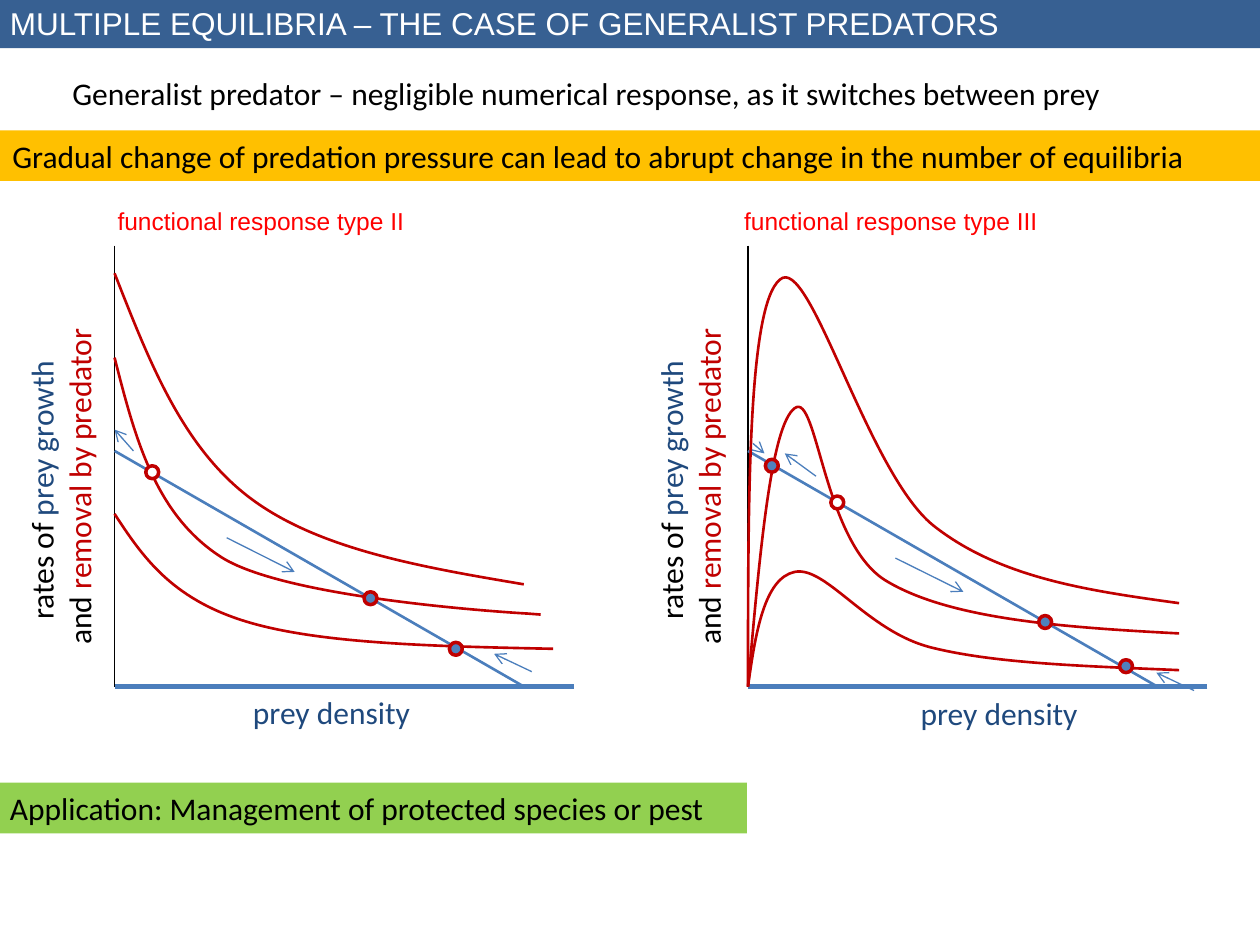
from dataclasses import dataclass

from lxml.etree import SubElement
from pptx import Presentation
from pptx.dml.color import RGBColor
from pptx.enum.shapes import MSO_CONNECTOR as Connector, MSO_SHAPE as Shape
from pptx.enum.text import MSO_AUTO_SIZE as AutoSize, PP_ALIGN as Align
from pptx.oxml.ns import qn
from pptx.util import Cm, Pt

BLACK, WHITE, RED, CRIMSON = "000000", "FFFFFF", "FF0000", "C00000"
NAVY, PREY_BLUE, STABLE_BLUE = "1F497D", "4B7EBC", "4F81BD"
AXIS_HEIGHT, AXIS_WIDTH = 8.89, 9.26
PREY_GROWTH = ((0, 4.75), (8.25, 0))


@dataclass
class Graph:
    """Hold one graph in cm, with points counted right and up from its origin."""
    title: str
    left: float
    title_x: float
    rates_x: float
    density_x: float
    density_drop: float
    predation: list
    stable: list
    unstable: list
    arrows: list


TYPE_II = Graph(
    "functional response type II", 2.31, 3.06, -1.09, 4.39, 0,
    predation=[
        [(0, 3.48), (0.56, 2.62), (1.14, 1.78), (2.62, 1.32),
         (4.09, 0.86), (6.45, 0.81), (8.84, 0.76)],
        [(0, 6.63), (0.41, 5.03), (0.81, 3.45), (2.18, 2.59),
         (3.58, 1.73), (8.33, 1.47), (8.33, 1.47),
         (8.33, 1.47), (8.59, 1.45), (8.59, 1.45)],
        [(0, 8.33), (0.69, 6.58), (1.35, 4.85), (2.72, 3.81),
         (4.09, 2.77), (6.17, 2.41), (8.25, 2.06)],
    ],
    stable=[(6.88, 0.76), (5.16, 1.78)],
    unstable=[(0.76, 4.32)],
    arrows=[((2.26, 3), (3.63, 2.31)), ((0.38, 4.75), (0, 5.18)),
            ((8.41, 0.3), (7.65, 0.66))],
)
TYPE_III = Graph(
    "functional response type III", 15.08, 2.92, -1.17, 5.08, 0.03,
    predation=[
        [(0, 0), (0.15, 1.09), (0.33, 2.18), (0.94, 2.31), (1.57, 2.44),
         (2.39, 1.12), (3.68, 0.79), (4.98, 0.46), (6.83, 0.41), (8.69, 0.33)],
        [(0, 0), (0.23, 2.64), (0.46, 5.26), (0.94, 5.61), (1.4, 5.97),
         (1.52, 2.84), (2.82, 2.11), (4.11, 1.35), (6.4, 1.19), (8.69, 1.07)],
        [(0, 0), (0, 3.84), (0, 7.67), (0.64, 8.2), (1.24, 8.76),
         (2.39, 4.34), (3.73, 3.25), (5.08, 2.18), (6.88, 1.93), (8.69, 1.68)],
    ],
    stable=[(7.62, 0.41), (5.99, 1.3), (0.48, 4.45)],
    unstable=[(1.8, 3.71)],
    arrows=[((2.97, 2.59), (4.34, 1.91)), ((1.37, 4.24), (0.74, 4.7)),
            ((0.1, 4.9), (0.33, 4.7)), ((8.99, -0.08), (8.23, 0.28))],
)


def rgb(value):
    """Turn a hex string into a colour."""
    return RGBColor.from_string(value)


def write(paragraph, pieces, size=18, font="Calibri", align=Align.LEFT):
    """Fill a paragraph with (text, colour) pieces."""
    paragraph.alignment = align
    paragraph.font.size = Pt(size)
    paragraph.font.name = font
    for text, color in pieces:
        run = paragraph.add_run()
        run.text = text
        run.font.color.rgb = rgb(color)


def add_label(slide, left, top, width, height, lines, **style):
    """Place unwrapped text, one list of pieces for each line."""
    label = slide.shapes.add_textbox(Cm(left), Cm(top), Cm(width), Cm(height))
    frame = label.text_frame
    frame.word_wrap = False
    frame.auto_size = AutoSize.SHAPE_TO_FIT_TEXT
    for index, pieces in enumerate(lines):
        paragraph = frame.add_paragraph() if index else frame.paragraphs[0]
        write(paragraph, pieces, **style)
    return label


def add_band(slide, left, top, width, fill, text, color=BLACK, font="Calibri"):
    """Place a filled band with one line of text."""
    band = slide.shapes.add_shape(
        Shape.RECTANGLE, Cm(left), Cm(top), Cm(width), Cm(1.02))
    band.shadow.inherit = False
    band.fill.solid()
    band.fill.fore_color.rgb = rgb(fill)
    band.line.fill.background()
    write(band.text_frame.paragraphs[0], [(text, color)], font=font)


def add_line(slide, start, end, color, weight, arrow=False):
    """Draw a straight line, with an open arrowhead at its end if asked."""
    line = slide.shapes.add_connector(
        Connector.STRAIGHT, *(Cm(value) for value in (*start, *end)))
    line.line.color.rgb = rgb(color)
    line.line.width = Pt(weight)
    if arrow:
        SubElement(line.line._get_or_add_ln(), qn("a:tailEnd"), type="arrow")
    SubElement(line._element.spPr, qn("a:effectLst"))


def add_curve(slide, points):
    """Draw a Bézier curve from a start point and groups of three points."""
    start, *others = [(Cm(x), Cm(y)) for x, y in points]
    builder = slide.shapes.build_freeform(*start)
    builder.add_line_segments(others, close=False)
    curve = builder.convert_to_shape()
    curve.shadow.inherit = False
    curve.fill.background()
    curve.line.color.rgb = rgb(CRIMSON)
    curve.line.width = Pt(1.5)
    segments = list(curve._element.iter(qn("a:lnTo")))
    outline = segments[0].getparent()
    for first in range(0, len(segments), 3):
        bezier = SubElement(outline, qn("a:cubicBezTo"))
        for segment in segments[first:first + 3]:
            bezier.append(segment[0])
            outline.remove(segment)


def add_equilibrium(slide, center, fill):
    """Draw the ring that marks an equilibrium."""
    size = 0.26
    x, y = center
    ring = slide.shapes.add_shape(
        Shape.OVAL, Cm(x - size / 2), Cm(y - size / 2), Cm(size), Cm(size))
    ring.shadow.inherit = False
    ring.fill.solid()
    ring.fill.fore_color.rgb = rgb(fill)
    ring.line.color.rgb = rgb(CRIMSON)
    ring.line.width = Pt(2)


def add_graph(slide, graph, base):
    """Draw a graph whose horizontal axis lies at the given height."""
    def at(point):
        """Turn a graph point into a slide point."""
        return graph.left + point[0], base - point[1]

    origin = at((0, 0))
    add_line(slide, at((0, AXIS_HEIGHT)), origin, BLACK, 1)
    add_line(slide, at((AXIS_WIDTH, 0)), origin, PREY_BLUE, 3)
    add_line(slide, *map(at, PREY_GROWTH), PREY_BLUE, 1.5)
    for points in graph.predation:
        add_curve(slide, [at(point) for point in points])
    for points, fill in ((graph.stable, STABLE_BLUE), (graph.unstable, WHITE)):
        for point in points:
            add_equilibrium(slide, at(point), fill)
    for start, end in graph.arrows:
        add_line(slide, at(start), at(end), PREY_BLUE, 0.75, arrow=True)

    add_label(slide, *at((graph.title_x - 3.25, 9.82)), 6.5, 0.86,
              [[(graph.title, RED)]], size=14, font="Arial")
    add_label(slide, *at((graph.density_x - 1.85, -graph.density_drop)), 3.71, 1.02,
              [[("prey density", NAVY)]])
    rates = add_label(slide, *at((graph.rates_x - 3.48, 4.93)), 6.96, 1.8,
                      [[("rates of ", BLACK), ("prey growth ", NAVY)],
                       [("and ", BLACK), ("removal by predator", CRIMSON)]],
                      align=Align.CENTER)
    rates.rotation = 270


def main():
    """Build the slide and save it."""
    deck = Presentation()
    deck.slide_width, deck.slide_height = Cm(25.4), Cm(19.05)
    slide = deck.slides.add_slide(deck.slide_layouts[6])
    add_band(slide, -0.05, -0.05, 25.45, "376092",
             "MULTIPLE EQUILIBRIA – THE CASE OF GENERALIST PREDATORS", WHITE, "Arial")
    add_label(slide, 1.21, 1.37, 21.5, 1.02, [[(
        "Generalist predator – negligible numerical response, "
        "as it switches between prey", BLACK)]])
    for graph in (TYPE_II, TYPE_III):
        add_graph(slide, graph, 13.84)
    add_band(slide, 0, 2.63, 25.43, "FFC000",
             "Gradual change of predation pressure can lead to abrupt change "
             "in the number of equilibria")
    add_band(slide, -0.05, 15.78, 15.11, "92D050",
             "Application: Management of protected species or pest")
    deck.save("out.pptx")


if __name__ == "__main__":
    main()
